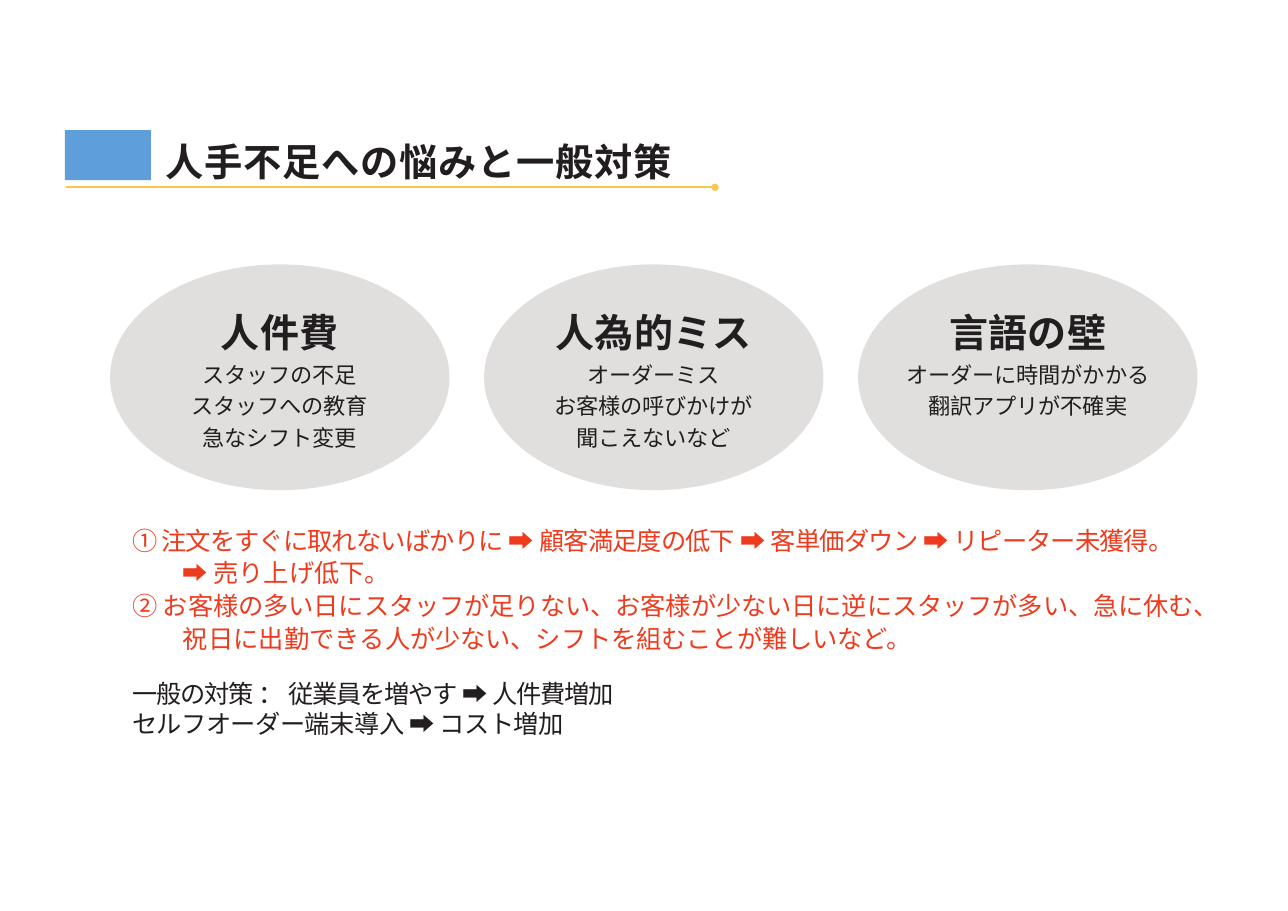
from lxml.etree import SubElement
from pptx import Presentation
from pptx.dml.color import RGBColor
from pptx.enum.shapes import MSO_CONNECTOR, MSO_SHAPE
from pptx.enum.text import MSO_ANCHOR, PP_ALIGN
from pptx.oxml.ns import qn
from pptx.util import Inches, Pt

INK, RED, BLUE, GOLD, GREY = "221E1F", "EE3B1D", "5E9EDA", "FAC749", "E1DEDE"


def rgb(value):
    return RGBColor.from_string(value)


class Deck:
    """Holds the style and current slide; lengths are percent of the slide size."""

    font = "Noto Sans CJK JP"

    def __init__(self, width, height):
        self.prs = Presentation()
        self.prs.slide_width, self.prs.slide_height = Inches(width), Inches(height)
        self.s = self.prs.slides.add_slide(self.prs.slide_layouts[6])

    def box(self, x, y, w, h):
        sw, sh = self.prs.slide_width, self.prs.slide_height
        return [int(v * side / 100) for v, side in ((x, sw), (y, sh), (w, sw), (h, sh))]

    def shape(self, kind, area, color):
        sp = self.s.shapes.add_shape(kind, *self.box(*area))
        sp.shadow.inherit = False
        sp.fill.solid()
        sp.fill.fore_color.rgb = rgb(color)
        sp.line.fill.background()
        return sp

    def line(self, x1, x2, y, color, weight):
        left, top, right, _ = self.box(x1, y, x2, 0)
        c = self.s.shapes.add_connector(MSO_CONNECTOR.STRAIGHT, left, top, right, top)
        c.line.color.rgb = rgb(color)
        c.line.width = Pt(weight)
        SubElement(c._element.spPr, qn("a:effectLst"))

    def textbox(self, area):
        return self.frame(self.s.shapes.add_textbox(*self.box(*area)))

    def frame(self, sp, top=0):
        tf = sp.text_frame
        tf.word_wrap = False
        tf.vertical_anchor = MSO_ANCHOR.TOP
        tf.margin_left = tf.margin_right = tf.margin_bottom = 0
        tf.margin_top = Inches(top)
        return tf

    def paragraph(self, tf, runs, size, pitch, color=INK, bold=False,
                  align=PP_ALIGN.LEFT, before=0, indent=0):
        p = tf.paragraphs[0]
        if p.runs:
            p = tf.add_paragraph()
        p.alignment = align
        p.line_spacing, p.space_before = Pt(pitch), Pt(before)
        if indent:
            p._p.get_or_add_pPr().set("marL", str(Inches(indent)))
        for text, spacing in runs:
            r = p.add_run()
            r.text = text
            r.font.name, r.font.size, r.font.bold = self.font, Pt(size), bold
            r.font.color.rgb = rgb(color)
            rpr = r.font._element
            rpr.set("spc", str(round(spacing * 100)))
            SubElement(rpr, qn("a:ea")).set("typeface", self.font)


WORRIES = [
    ("人件費", ["スタッフの不足", "スタッフへの教育", "急なシフト変更"]),
    ("人為的ミス", ["オーダーミス", "お客様の呼びかけが", "聞こえないなど"]),
    ("言語の壁", ["オーダーに時間がかかる", "翻訳アプリが不確実"]),
]
EFFECTS = [
    (0, [("① 注文をすぐに取れないばかりに ", -0.5), ("➡ ", -0.1),
         ("顧客満足度の低下 ", -0.5), ("➡ ", -0.2), ("客単価ダウン ", -0.4),
         ("➡ ", -0.6), ("リピーター未獲得。", -0.5)]),
    (0.46, [("➡ 売り上げ低下。", 0)]),
    (0, [("② お客様の多い日にスタッフが足りない、"
          "お客様が少ない日に逆にスタッフが多い、急に休む、", 0)]),
    (0.46, [("祝日に出勤できる", 0.1),
            ("人が少ない、シフトを組むことが難しいなど。", 0)]),
]
MEASURES = [
    (16.6, [("一般の対策 ", -0.7), ("： ", -0.6), ("従業員を増やす ", -0.7),
            ("➡ ", -0.6), ("人件費増加", -0.7)]),
    (0, [("セルフオーダー端末導入 ", -0.3), ("➡ ", -0.2), ("コスト増加", -0.3)]),
]


def main():
    deck = Deck(11.69, 8.27)
    deck.shape(MSO_SHAPE.RECTANGLE, (5.05, 14.27, 6.67, 5.5), BLUE)
    deck.line(5.13, 55.52, 20.56, GOLD, 1.25)
    deck.shape(MSO_SHAPE.OVAL, (55.24, 20.16, 0.56, 0.8), GOLD)

    title = deck.textbox((12.83, 14.21, 40.63, 6.05))
    deck.paragraph(title, [("人手不足への", 0.6), ("悩みと一般対策", 0.5)], 25, 36, bold=True)

    for i, (heading, details) in enumerate(WORRIES):
        oval = deck.shape(MSO_SHAPE.OVAL, (8.55 + 29.04 * i, 29.02, 26.35, 24.79), GREY)
        tf = deck.frame(oval, top=0.03)
        deck.paragraph(tf, [(heading, 0.1)], 25.5, 36, bold=True, align=PP_ALIGN.CENTER)
        for detail in details:
            deck.paragraph(tf, [(detail, -0.1)], 14.5, 20.7, align=PP_ALIGN.CENTER)

    body = deck.textbox((10.27, 57.35, 85.12, 24))
    for indent, runs in EFFECTS:
        deck.paragraph(body, runs, 16.5, 21.4, RED, indent=indent)
    for before, runs in MEASURES:
        deck.paragraph(body, runs, 16.5, 19.6, before=before)
    deck.prs.save("out.pptx")


if __name__ == "__main__":
    main()
